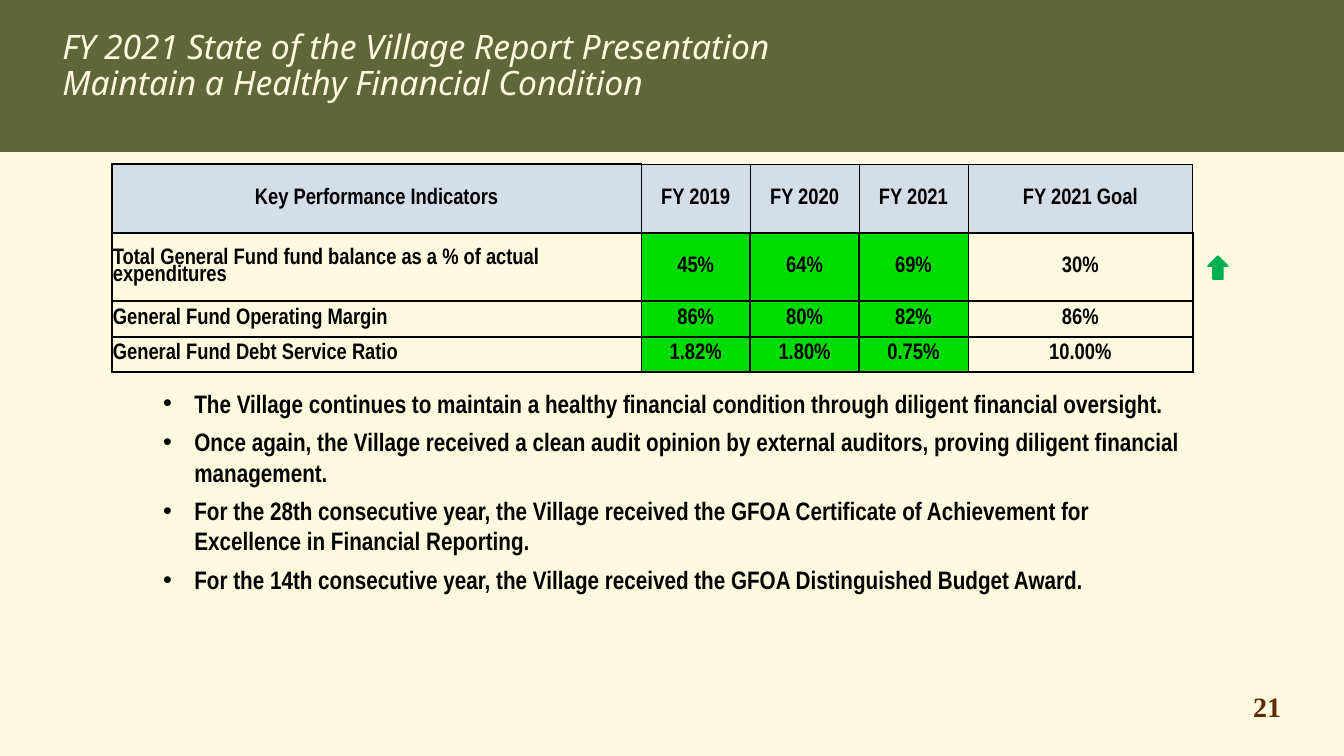
import dataclasses
import typing

import lxml.etree
import pptx
import pptx.dml.color
import pptx.enum.shapes
import pptx.enum.text
import pptx.oxml.ns
import pptx.util

Inches = pptx.util.Inches
Pt = pptx.util.Pt
ALIGN = pptx.enum.text.PP_ALIGN
SHAPE = pptx.enum.shapes.MSO_SHAPE


@dataclasses.dataclass(frozen=True)
class Theme:
    cream: str = "FFF9DF"
    olive: str = "5E663A"
    brown: str = "5D2B00"
    black: str = "000000"
    steel: str = "D3DEE7"
    lime: str = "00DC00"
    green: str = "00B050"
    title: int = 24
    page: int = 20
    body: int = 18
    cell: int = 16


THEME = Theme()


class Box(typing.NamedTuple):
    left: float
    top: float
    width: float
    height: float

    def place(self) -> list[int]:
        return [Inches(side) for side in self]


@dataclasses.dataclass(frozen=True)
class Style:
    face: str
    size: int
    color: str
    bold: bool = False
    slant: bool = False
    para: dict[str, typing.Any] = dataclasses.field(default_factory=dict)
    bullet: bool = False


@dataclasses.dataclass(frozen=True)
class Label:
    box: Box
    lines: list[str]
    style: Style


@dataclasses.dataclass(frozen=True)
class Block:
    kind: int
    box: Box
    color: str


BLOCKS = [
    Block(SHAPE.RECTANGLE, Box(0, 0, 13.33, 1.5), THEME.olive),
    Block(SHAPE.UP_ARROW, Box(11.98, 2.54, 0.2, 0.23), THEME.green),
]

LABELS = [
    Label(Box(12.33, 6.79, 0.69, 0.44), ["21"],
          Style("Times New Roman", THEME.page, THEME.brown, bold=True)),
    Label(Box(0.52, 0.25, 12.19, 0.91),
          ["FY 2021 State of the Village Report Presentation",
           "Maintain a Healthy Financial Condition"],
          Style("Noto Sans", THEME.title, THEME.cream, slant=True,
                para={"line_spacing": 0.9})),
    Label(Box(1.52, 3.8, 10.3, 2.16),
          ["The Village continues to maintain a healthy financial condition "
           "through diligent financial oversight.",
           "Once again, the Village received a clean audit opinion by external "
           "auditors, proving diligent financial management.",
           "For the 28th consecutive year, the Village received the GFOA "
           "Certificate of Achievement for Excellence in Financial Reporting.",
           "For the 14th consecutive year, the Village received the GFOA "
           "Distinguished Budget Award."],
          Style("Arial Narrow", THEME.body, THEME.black, bold=True,
                para={"space_after": Pt(6)}, bullet=True)),
]

GRID = Box(1.11, 1.63, 10.73, 2.06)
WIDTHS = [5.25, 1.08, 1.08, 1.08, 2.23]
HEIGHTS = [0.68, 0.68, 0.35, 0.35]
ROWS = [
    ["Key Performance Indicators", "FY 2019", "FY 2020", "FY 2021", "FY 2021 Goal"],
    ["Total General Fund fund balance as a % of actual expenditures",
     "45%", "64%", "69%", "30%"],
    ["General Fund Operating Margin", "86%", "80%", "82%", "86%"],
    ["General Fund Debt Service Ratio", "1.82%", "1.80%", "0.75%", "10.00%"],
]
# Line weights in points at each column edge, left to right
HEAD_EDGES = [1.5, 0.5, 0.5, 0.5, 0.5, 1]
BODY_EDGES = [1.5, 0.5, 1.5, 1.5, 0.5, 1.5]
CELL_FORMAT = {
    "margin_left": Inches(0.01), "margin_right": Inches(0.01),
    "margin_top": Inches(0.01), "margin_bottom": 0,
    "vertical_anchor": pptx.enum.text.MSO_ANCHOR.MIDDLE,
}


def paint(fill: typing.Any, color: str) -> None:
    fill.solid()
    fill.fore_color.rgb = pptx.dml.color.RGBColor.from_string(color)


def apply(target: typing.Any, values: dict[str, typing.Any]) -> None:
    for name, value in values.items():
        setattr(target, name, value)


def add_node(parent: typing.Any, tag: str, **values: str) -> typing.Any:
    return lxml.etree.SubElement(parent, pptx.oxml.ns.qn(tag), values)


def write(frame: typing.Any, lines: list[str], style: Style) -> None:
    frame.text = "\n".join(lines)
    for para in frame.paragraphs:
        apply(para, style.para)
        font = para.runs[0].font
        apply(font, {"name": style.face, "size": Pt(style.size),
                     "bold": style.bold, "italic": style.slant})
        paint(font.fill, style.color)
        if style.bullet:
            props = para._p.get_or_add_pPr()
            indent = Inches(0.31)
            props.set("marL", str(indent))
            props.set("indent", str(-indent))
            add_node(props, "a:buFont", typeface="Arial")
            add_node(props, "a:buChar", char="•")


def add_block(slide: typing.Any, block: Block) -> None:
    shape = slide.shapes.add_shape(block.kind, *block.box.place())
    shape.shadow.inherit = False
    paint(shape.fill, block.color)
    paint(shape.line.fill, block.color)
    shape.line.width = Pt(1)


def add_label(slide: typing.Any, label: Label) -> None:
    frame = slide.shapes.add_textbox(*label.box.place()).text_frame
    frame.word_wrap = True
    write(frame, label.lines, label.style)


def rule_cell(cell: typing.Any, weights: dict[str, float]) -> None:
    """Draw the cell borders; call this before the fill is set."""
    props = cell._tc.get_or_add_tcPr()
    for side, weight in weights.items():
        line = add_node(props, f"a:ln{side}", w=str(Pt(weight)))
        add_node(add_node(line, "a:solidFill"), "a:srgbClr", val=THEME.black)


def add_grid(slide: typing.Any) -> None:
    table = slide.shapes.add_table(len(ROWS), len(WIDTHS), *GRID.place()).table
    apply(table, {"first_row": False, "horz_banding": False})
    for column, width in zip(table.columns, WIDTHS):
        column.width = Inches(width)
    for row, height in zip(table.rows, HEIGHTS):
        row.height = Inches(height)
    for r, texts in enumerate(ROWS):
        edges = BODY_EDGES if r else HEAD_EDGES
        for c, text in enumerate(texts):
            cell = table.cell(r, c)
            apply(cell, CELL_FORMAT)
            rule_cell(cell, {"L": edges[c], "R": edges[c + 1],
                             "T": 1 if r == 0 and c else 1.5, "B": 1.5})
            if r == 0:
                paint(cell.fill, THEME.steel)
            elif 1 <= c <= 3:
                paint(cell.fill, THEME.lime)
            else:
                cell.fill.background()
            align = ALIGN.LEFT if r and c == 0 else ALIGN.CENTER
            write(cell.text_frame, [text],
                  Style("Arial Narrow", THEME.cell, THEME.black, bold=True,
                        para={"alignment": align, "line_spacing": 0.8}))


def main() -> None:
    deck = pptx.Presentation()
    apply(deck, {"slide_width": Inches(13.33), "slide_height": Inches(7.5)})
    slide = deck.slides.add_slide(deck.slide_layouts[6])
    paint(slide.background.fill, THEME.cream)
    for block in BLOCKS:
        add_block(slide, block)
    for label in LABELS:
        add_label(slide, label)
    add_grid(slide)
    deck.save("out.pptx")


if __name__ == "__main__":
    main()
